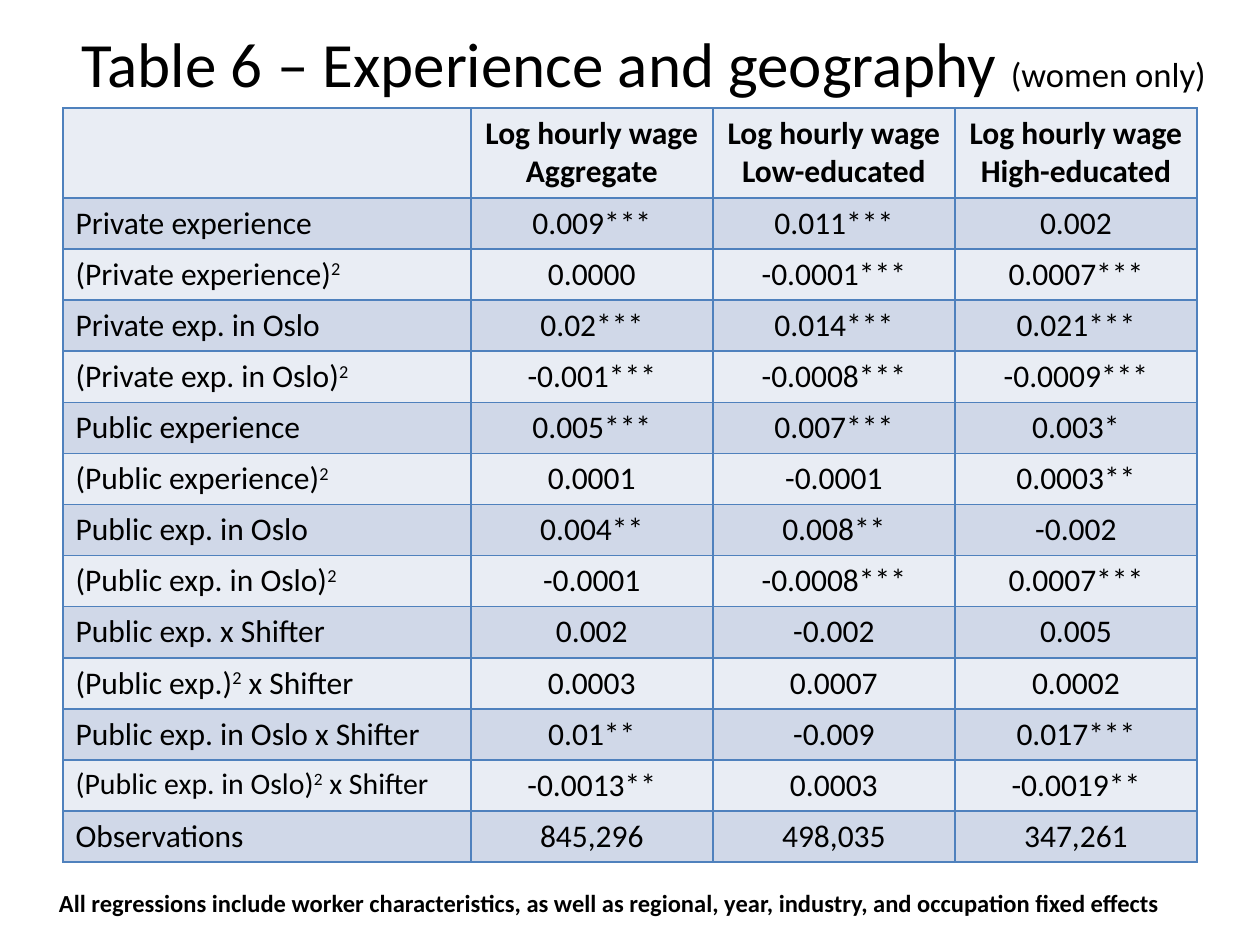
from lxml import etree
from pptx import Presentation
from pptx.dml.color import RGBColor
from pptx.enum import text as t
from pptx.oxml import ns
from pptx.util import Cm, Pt

BLACK = RGBColor(0x00, 0x00, 0x00)
BORDER = RGBColor(0x4F, 0x81, 0xBD)
BANDS = (RGBColor(0xE9, 0xED, 0xF4), RGBColor(0xD0, 0xD8, 0xE8))
FONT = "Calibri"

TITLE = [("Table 6 – Experience and geography ", 36), ("(women only)", 19.8)]
FOOTNOTE = ("All regressions include worker characteristics, as well as regional, "
            "year, industry, and occupation fixed effects")
SQUARED = "^2"  # set as a superscript 2
HEADER = ("", "Log hourly wage\nAggregate", "Log hourly wage\nLow-educated",
          "Log hourly wage\nHigh-educated")
ESTIMATES = [
    ("Private experience", "0.009***", "0.011***", "0.002"),
    ("(Private experience)^2", "0.0000", "-0.0001***", "0.0007***"),
    ("Private exp. in Oslo", "0.02***", "0.014***", "0.021***"),
    ("(Private exp. in Oslo)^2", "-0.001***", "-0.0008***", "-0.0009***"),
    ("Public experience", "0.005***", "0.007***", "0.003*"),
    ("(Public experience)^2", "0.0001", "-0.0001", "0.0003**"),
    ("Public exp. in Oslo", "0.004**", "0.008**", "-0.002"),
    ("(Public exp. in Oslo)^2", "-0.0001", "-0.0008***", "0.0007***"),
    ("Public exp. x Shifter", "0.002", "-0.002", "0.005"),
    ("(Public exp.)^2 x Shifter", "0.0003", "0.0007", "0.0002"),
    ("Public exp. in Oslo x Shifter", "0.01**", "-0.009", "0.017***"),
    ("(Public exp. in Oslo)^2 x Shifter", "-0.0013**", "0.0003", "-0.0019**"),
    ("Observations", "845,296", "498,035", "347,261"),
]
SMALLER_LABEL = "(Public exp. in Oslo)^2 x Shifter"
COLUMN_WIDTHS = (8.22, 4.88, 4.88, 4.88)
HEADER_HEIGHT, ROW_HEIGHT = 1.81, 1.03


def write(paragraph, words, size=18, bold=False, align=t.PP_ALIGN.LEFT):
    """Append words to the paragraph, raising the 2 of each SQUARED mark."""
    paragraph.alignment = align
    base, mark, rest = words.partition(SQUARED)
    for part, raised in ((base, False), ("2" if mark else "", True), (rest, False)):
        if not part:
            continue
        run = paragraph.add_run()
        run.text = part
        run.font.name, run.font.size, run.font.bold = FONT, Pt(size), bold
        run.font.color.rgb = BLACK
        if raised:
            run.font._element.set("baseline", "30000")


def add_frame(slide, left, top, width, height, anchor):
    frame = slide.shapes.add_textbox(Cm(left), Cm(top), Cm(width), Cm(height)).text_frame
    frame.word_wrap = True
    frame.vertical_anchor = anchor
    return frame


def add_borders(cell):
    properties = cell._tc.get_or_add_tcPr()
    for position, side in enumerate(("lnL", "lnR", "lnT", "lnB")):
        line = etree.Element(ns.qn(f"a:{side}"), w=str(Pt(1)))
        fill = etree.SubElement(line, ns.qn("a:solidFill"))
        etree.SubElement(fill, ns.qn("a:srgbClr"), val=str(BORDER))
        properties.insert(position, line)


def add_estimates(slide, left, top):
    rows = [HEADER, *ESTIMATES]
    heights = [HEADER_HEIGHT] + [ROW_HEIGHT] * len(ESTIMATES)
    table = slide.shapes.add_table(len(rows), len(HEADER), Cm(left), Cm(top),
                                   Cm(sum(COLUMN_WIDTHS)), Cm(sum(heights))).table
    table.first_row = table.horz_banding = False
    for column, width in zip(table.columns, COLUMN_WIDTHS):
        column.width = Cm(width)
    for r, (values, height) in enumerate(zip(rows, heights)):
        table.rows[r].height = Cm(height)
        for c, value in enumerate(values):
            cell = table.cell(r, c)
            cell.fill.solid()
            cell.fill.fore_color.rgb = BANDS[r % 2]
            add_borders(cell)
            for i, line in enumerate(value.split("\n")):
                frame = cell.text_frame
                write(frame.add_paragraph() if i else frame.paragraphs[0], line,
                      size=17 if value == SMALLER_LABEL else 18, bold=r == 0,
                      align=t.PP_ALIGN.CENTER if c else t.PP_ALIGN.LEFT)


def main():
    deck = Presentation()
    deck.slide_width, deck.slide_height = Cm(25.4), Cm(19.05)
    slide = deck.slides.add_slide(deck.slide_layouts[6])

    title = add_frame(slide, 1.27, 0.48, 23.42, 1.57, t.MSO_ANCHOR.MIDDLE)
    for words, size in TITLE:
        write(title.paragraphs[0], words, size=size, align=t.PP_ALIGN.CENTER)

    add_estimates(slide, 1.27, 2.18)

    footnote = add_frame(slide, 0.94, 17.78, 23.19, 0.86, t.MSO_ANCHOR.TOP)
    write(footnote.paragraphs[0], FOOTNOTE, size=14, bold=True)

    deck.save("out.pptx")


if __name__ == "__main__":
    main()
